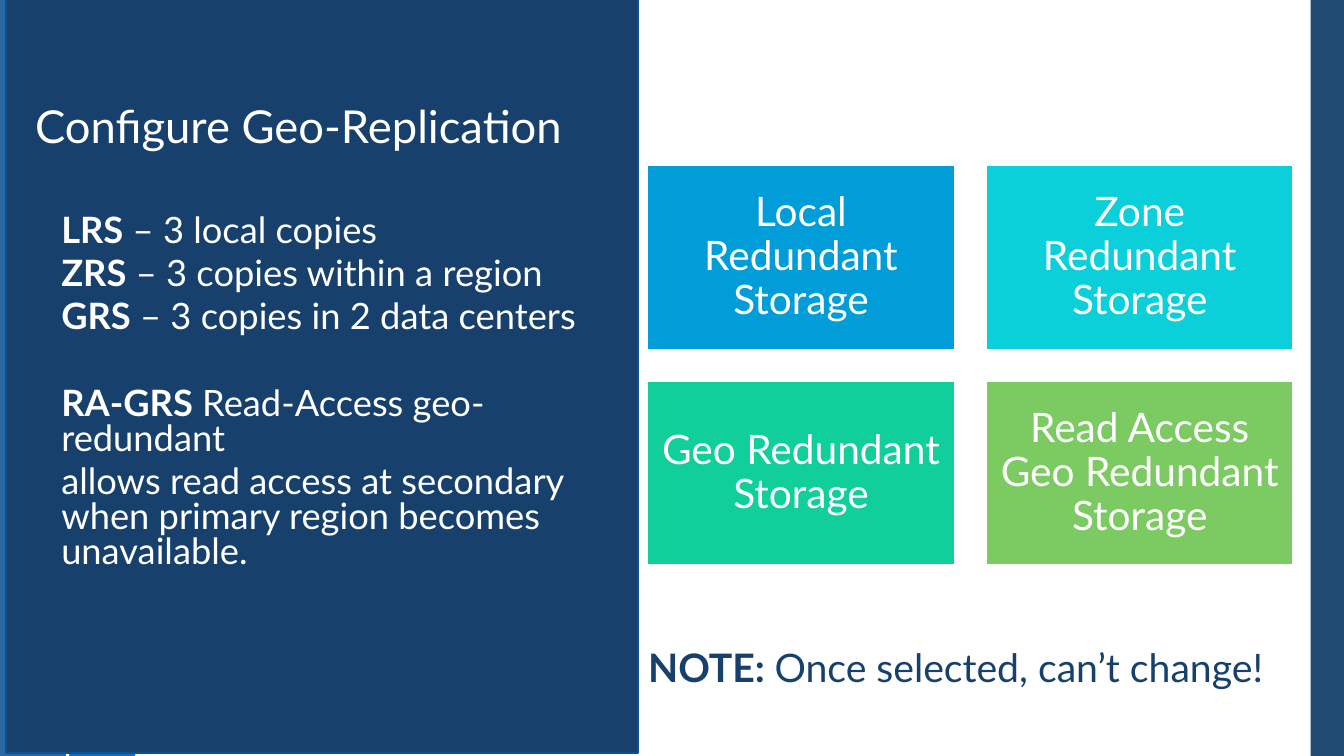
from lxml import etree
from pptx import Presentation
from pptx.dml.color import RGBColor as RGB
from pptx.enum.shapes import MSO_CONNECTOR as CONNECTOR, MSO_SHAPE as SHAPE
from pptx.enum.text import MSO_ANCHOR as ANCHOR, PP_ALIGN as ALIGN
from pptx.oxml.ns import qn
from pptx.util import Inches, Pt

THEME = {
    "font": "Lato", "white": "FFFFFF", "navy": "17406D", "panel_edge": "0B5292",
    "right_bar": "083763", "left_bar": "0B5394", "blue": "0F6FC6",
    "title": 32.4, "body": 25.9, "note": 28, "tile": 29,
}

deck = Presentation()
deck.slide_width, deck.slide_height = Inches(13.33), Inches(7.5)
slide = deck.slides.add_slide(deck.slide_layouts[6])


def add_block(box, fill, edge=None, edge_width=1, opacity=100):
    """Add a flat rectangle; box is left, top, width, height in inches."""
    block = slide.shapes.add_shape(SHAPE.RECTANGLE, *map(Inches, box))
    block.shadow.inherit = False
    block.fill.solid()
    block.fill.fore_color.rgb = RGB.from_string(fill)
    if opacity < 100:
        color = block.fill._xPr.find(".//" + qn("a:srgbClr"))
        etree.SubElement(color, qn("a:alpha"), val=str(opacity * 1000))
    if edge:
        block.line.color.rgb = RGB.from_string(edge)
        block.line.width = Pt(edge_width)
    else:
        block.line.fill.background()
    return block


def write(paragraph, text, size, color, bold=False):
    run = paragraph.add_run()
    run.text = text
    format_values = {"name": THEME["font"], "size": Pt(size), "bold": bold}
    for attribute, value in format_values.items():
        setattr(run.font, attribute, value)
    run.font.color.rgb = RGB.from_string(color)


# Side bars and left panel
add_block((13, 0, 0.33, 7.5), THEME["right_bar"], opacity=90)
add_block((0.67, 0, 0.67, 7.5), THEME["blue"])
add_block((0, 0, 0.67, 7.5), THEME["left_bar"], opacity=88)
divider = slide.shapes.add_connector(
    CONNECTOR.STRAIGHT, Inches(0.67), Inches(0), Inches(0.67), Inches(7.5))
divider.line.color.rgb = RGB.from_string(THEME["white"])
divider.line.width = Pt(1.5)
etree.SubElement(divider._element.spPr, qn("a:effectLst"))
add_block((0.06, -0.03, 6.27, 7.5), THEME["navy"], THEME["panel_edge"])

# Title and replication options: bold term, explanation, space before
options = [
    ("LRS", " – 3 local copies", 45),
    ("ZRS", " – 3 copies within a region", 6),
    ("GRS", " – 3 copies in 2 data centers", 6),
    ("RA-GRS", " Read-Access geo-redundant", 37),
    ("", "allows read access at secondary when primary region becomes unavailable.", 6),
]
overview = slide.shapes.add_textbox(
    Inches(0.25), Inches(1.03), Inches(5.83), Inches(5.51)).text_frame
overview.word_wrap = True
title = overview.paragraphs[0]
title.line_spacing = 0.8
write(title, "Configure Geo-Replication", THEME["title"], THEME["white"])
for term, explanation, gap in options:
    option = overview.add_paragraph()
    option.level = 1
    option._p.get_or_add_pPr().set("marL", str(Inches(0.26)))
    option._p.get_or_add_pPr().set("indent", "0")
    option.line_spacing = 0.8
    option.space_before = Pt(gap)
    if term:
        write(option, term, THEME["body"], THEME["white"], bold=True)
    write(option, explanation, THEME["body"], THEME["white"])

# Note
note = slide.shapes.add_textbox(
    Inches(6.33), Inches(6.33), Inches(6.75), Inches(0.88)).text_frame
note.word_wrap = True
write(note.paragraphs[0], "NOTE: ", THEME["note"], THEME["navy"], bold=True)
write(note.paragraphs[0], "Once selected, can’t change!", THEME["note"], THEME["navy"])

# Two-by-two grid of storage types
storage_types = [
    ("Local Redundant Storage", "009DD9"),
    ("Zone Redundant Storage", "0BD0D9"),
    ("Geo Redundant Storage", "10CF9B"),
    ("Read Access Geo Redundant Storage", "7CCA62"),
]
for index, (storage, fill) in enumerate(storage_types):
    row, column = divmod(index, 2)
    tile = add_block((6.42 + column * 3.36, 1.64 + row * 2.14, 3.05, 1.83),
                     fill, THEME["white"], 1.5).text_frame
    tile.word_wrap = True
    tile.vertical_anchor = ANCHOR.MIDDLE
    for side in ("left", "top", "right", "bottom"):
        setattr(tile, f"margin_{side}", Inches(0.12))
    label = tile.paragraphs[0]
    label.alignment = ALIGN.CENTER
    label.line_spacing = 0.9
    write(label, storage, THEME["tile"], THEME["white"])

deck.save("out.pptx")
